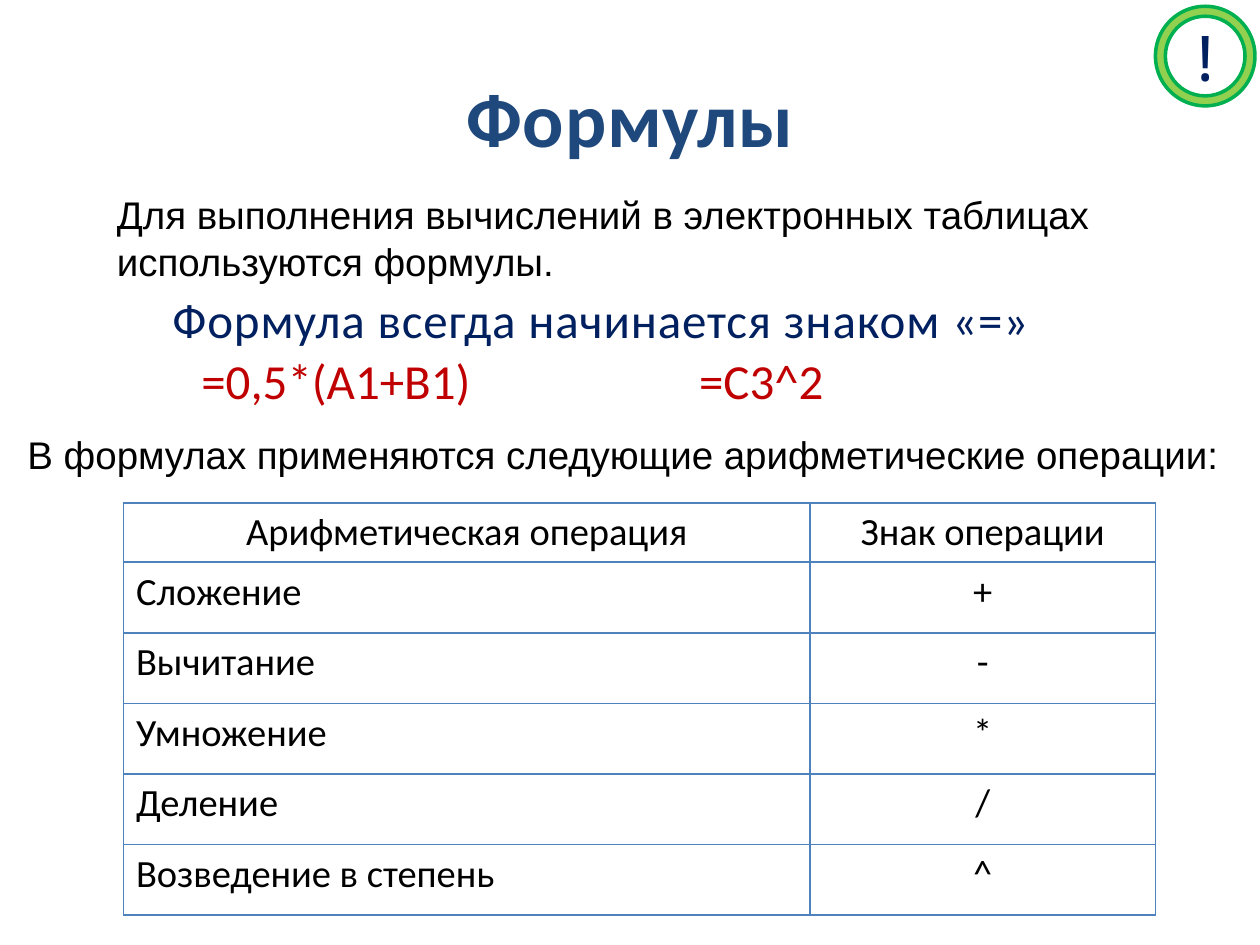
from lxml import etree
from pptx import Presentation
from pptx.dml.color import RGBColor
from pptx.enum.shapes import MSO_SHAPE
from pptx.enum.text import MSO_ANCHOR, MSO_AUTO_SIZE, PP_ALIGN
from pptx.oxml.ns import qn
from pptx.util import Inches, Pt

DONUT = MSO_SHAPE.DONUT
MIDDLE = MSO_ANCHOR.MIDDLE
FIT_SHAPE = MSO_AUTO_SIZE.SHAPE_TO_FIT_TEXT
LEFT, CENTER = PP_ALIGN.LEFT, PP_ALIGN.CENTER

NAVY, RED, BLACK = "002060", "C00000", "000000"
OPERATIONS = [
    ("Арифметическая операция", "Знак операции"),
    ("Сложение", "+"),
    ("Вычитание", "-"),
    ("Умножение", "*"),
    ("Деление", "/"),
    ("Возведение в степень", "^"),
]


def color(value):
    return RGBColor.from_string(value)


def place(shape, box):
    shape.left, shape.top, shape.width, shape.height = map(Inches, box)


def write(frame, text, size, font_name, font_color, align=LEFT, bold=False, spacing=0):
    frame.text = text
    paragraph = frame.paragraphs[0]
    paragraph.alignment = align
    font = paragraph.font
    font.size, font.name, font.bold = Pt(size), font_name, bold
    font.color.rgb = color(font_color)
    if spacing:
        properties = paragraph.runs[0]._r.get_or_add_rPr()
        properties.set("spc", str(int(spacing * 100)))


def add_title(slide, box):
    title = slide.shapes.title
    place(title, box)
    title.text_frame.vertical_anchor = MIDDLE
    write(title.text_frame, "Формулы", 44, "Calibri", "1F497D", CENTER, True, 0.5)


def add_text(slide, box, text, size, font_name, font_color, wrap=True, spacing=0):
    frame = slide.shapes.add_textbox(*map(Inches, box)).text_frame
    frame.word_wrap = wrap
    frame.auto_size = FIT_SHAPE
    write(frame, text, size, font_name, font_color, spacing=spacing)


def add_badge(slide, box):
    badge = slide.shapes.add_shape(DONUT, *map(Inches, box))
    badge.adjustments[0] = 0.1
    badge.shadow.inherit = False
    badge.fill.solid()
    badge.fill.fore_color.rgb = color("92D050")
    badge.line.color.rgb = color("00B050")
    badge.line.width = Pt(2)
    frame = badge.text_frame
    frame.margin_left = frame.margin_right = frame.margin_top = frame.margin_bottom = 0
    frame.word_wrap = False
    frame.vertical_anchor = MIDDLE
    write(frame, "!", 36, "Noto Sans Mono", NAVY, CENTER)


def set_borders(cell, line_color):
    properties = cell._tc.get_or_add_tcPr()
    for index, side in enumerate(("lnL", "lnR", "lnT", "lnB")):
        line = etree.Element(qn(f"a:{side}"), w=str(Pt(1)))
        fill = etree.SubElement(line, qn("a:solidFill"))
        etree.SubElement(fill, qn("a:srgbClr"), val=line_color)
        properties.insert(index, line)


def add_operations_table(slide, box):
    table = slide.shapes.add_table(len(OPERATIONS), 2, *map(Inches, box)).table
    table.first_row = table.horz_banding = False
    sign_width, header_height = 2.74, 0.47
    row_height = (box[3] - header_height) / (len(OPERATIONS) - 1)
    table.columns[0].width = Inches(box[2] - sign_width)
    table.columns[1].width = Inches(sign_width)
    for row, texts in enumerate(OPERATIONS):
        table.rows[row].height = Inches(row_height if row else header_height)
        for column, text in enumerate(texts):
            cell = table.cell(row, column)
            align = LEFT if row and column == 0 else CENTER
            write(cell.text_frame, text, 22, "Calibri", BLACK, align)
            cell.fill.background()
            set_borders(cell, "4F81BD")


def add_formulas(slide, left, top):
    add_text(slide, (left, top, 7.56, 0.57), "Формула всегда начинается знаком «=»",
             28, "Calibri", NAVY, spacing=0.5)
    for offset, width, formula in ((0.23, 2.37, "=0,5*(А1+В1)"), (4.18, 1.2, "=С3^2")):
        add_text(slide, (left + offset, top + 0.48, width, 0.57), formula,
                 28, "Calibri", RED, wrap=False)


def build_formulas_slide(presentation):
    slide = presentation.slides.add_slide(presentation.slide_layouts[5])
    add_title(slide, (0.5, 0.3, 9, 1.25))
    add_operations_table(slide, (0.98, 3.99, 8.19, 3.27))
    add_formulas(slide, 1.27, 2.25)
    add_badge(slide, (9.17, 0.05, 0.79, 0.79))
    add_text(slide, (0.83, 1.47, 8.74, 0.84),
             "Для выполнения вычислений в электронных таблицах используются формулы.",
             22, "Arial", BLACK)
    add_text(slide, (0.12, 3.37, 9.84, 0.47),
             "В формулах применяются следующие арифметические операции:",
             22, "Arial", BLACK)


def main():
    presentation = Presentation()
    presentation.slide_width, presentation.slide_height = Inches(10), Inches(7.5)
    build_formulas_slide(presentation)
    presentation.save("out.pptx")


if __name__ == "__main__":
    main()
